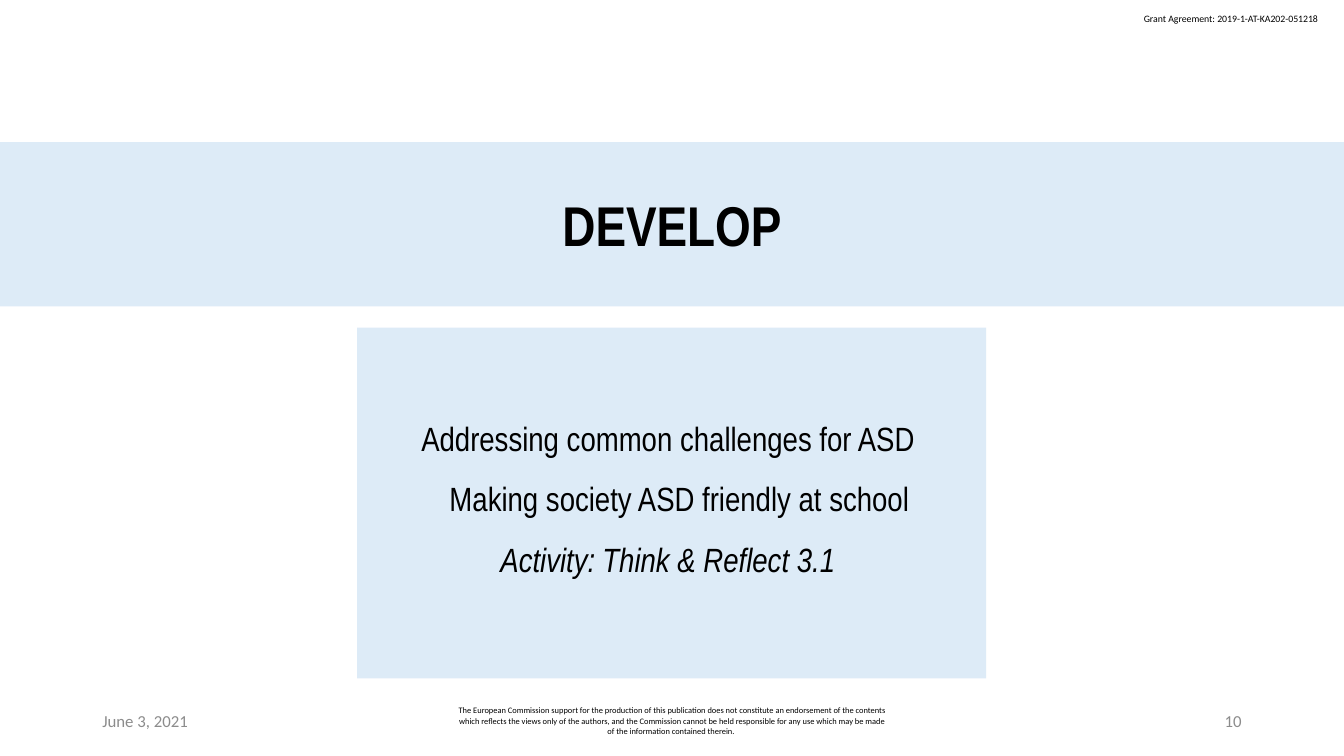
from dataclasses import dataclass

from pptx import Presentation
from pptx.dml.color import RGBColor
from pptx.enum.shapes import MSO_SHAPE
from pptx.enum.text import MSO_ANCHOR, PP_ALIGN
from pptx.slide import Slide
from pptx.text.text import TextFrame
from pptx.util import Pt

RECT = MSO_SHAPE.RECTANGLE
TOP, MIDDLE = MSO_ANCHOR.TOP, MSO_ANCHOR.MIDDLE
LEFT, CENTER, RIGHT = PP_ALIGN.LEFT, PP_ALIGN.CENTER, PP_ALIGN.RIGHT


@dataclass(frozen=True)
class Theme:
    black: RGBColor = RGBColor(0x00, 0x00, 0x00)
    gray: RGBColor = RGBColor(0x8C, 0x8C, 0x8C)
    panel: RGBColor = RGBColor(0xDD, 0xEB, 0xF7)
    body: str = "Calibri"
    head: str = "Arial Narrow"
    legal: int = 6
    grant: int = 7
    footer: int = 12
    topic: int = 24
    title: int = 40


THEME = Theme()


@dataclass(frozen=True)
class Line:
    text: str
    size: int
    font: str = THEME.body
    color: RGBColor = THEME.black
    align: PP_ALIGN = CENTER
    bold: bool = False
    italic: bool = False
    indent: float = 0
    spacing: float = 1.0


@dataclass(frozen=True)
class Box:
    """Place in points; the insets are left/right, top and bottom."""
    left: float
    top: float
    width: float
    height: float
    lines: tuple[Line, ...]
    anchor: MSO_ANCHOR = MIDDLE
    wrap: bool = True
    insets: tuple[float, float, float] = (7.2, 3.6, 3.6)


def topic(text: str, indent: float = 0, italic: bool = False) -> Line:
    return Line(text, THEME.topic, THEME.head, indent=indent,
                italic=italic, spacing=1.5)


def footer(left: float, width: float, line: Line) -> Box:
    return Box(left, 500.4, width, 28.8, (line,))


LEGAL = (
    "The European Commission support for the production of this publication "
    "does not constitute an endorsement of the contents which reflects the "
    "views only of the authors, and the Commission cannot be held responsible "
    "for any use which may be made of the information contained therein. "
)

LABELS = (
    Box(810, 5.76, 141.84, 15.84,
        (Line("Grant Agreement: 2019-1-AT-KA202-051218", THEME.grant,
              align=LEFT),),
        anchor=TOP, wrap=False),
    footer(66, 216, Line("June 3, 2021", THEME.footer,
                         color=THEME.gray, align=LEFT)),
    footer(318, 324, Line(LEGAL, THEME.legal)),
    footer(678, 216, Line("10", THEME.footer,
                          color=THEME.gray, align=RIGHT)),
)

PANELS = (
    Box(0, 101.5, 960, 117.3,
        (Line("DEVELOP", THEME.title, THEME.head, bold=True),),
        insets=(9.4, 5, 5)),
    Box(255, 234, 449.5, 250.6,
        (topic("Addressing common challenges for ASD "),
         topic("Making society ASD friendly at school", indent=10.8),
         topic("Activity: Think & Reflect 3.1 ", italic=True)),
        insets=(9.4, 5, 26)),
)


def write(frame: TextFrame, box: Box) -> None:
    frame.word_wrap = box.wrap
    frame.vertical_anchor = box.anchor
    side, top, bottom = box.insets
    frame.margin_left = frame.margin_right = Pt(side)
    frame.margin_top, frame.margin_bottom = Pt(top), Pt(bottom)
    for i, line in enumerate(box.lines):
        para = frame.add_paragraph() if i else frame.paragraphs[0]
        para.alignment = line.align
        para.line_spacing = line.spacing
        if line.indent:
            para._p.get_or_add_pPr().set("marL", str(Pt(line.indent)))
        run = para.add_run()
        run.text = line.text
        font = run.font
        font.name, font.size = line.font, Pt(line.size)
        font.bold, font.italic = line.bold, line.italic
        font.color.rgb = line.color


def place(box: Box) -> tuple[Pt, Pt, Pt, Pt]:
    return Pt(box.left), Pt(box.top), Pt(box.width), Pt(box.height)


def label(slide: Slide, box: Box) -> None:
    write(slide.shapes.add_textbox(*place(box)).text_frame, box)


def panel(slide: Slide, box: Box) -> None:
    shape = slide.shapes.add_shape(RECT, *place(box))
    shape.shadow.inherit = False
    shape.fill.solid()
    shape.fill.fore_color.rgb = THEME.panel
    shape.line.fill.background()
    write(shape.text_frame, box)


def main() -> None:
    deck = Presentation()
    deck.slide_width, deck.slide_height = Pt(960), Pt(540)
    slide = deck.slides.add_slide(deck.slide_layouts[6])
    for box in LABELS:
        label(slide, box)
    for box in PANELS:
        panel(slide, box)
    deck.save("out.pptx")


if __name__ == "__main__":
    main()
